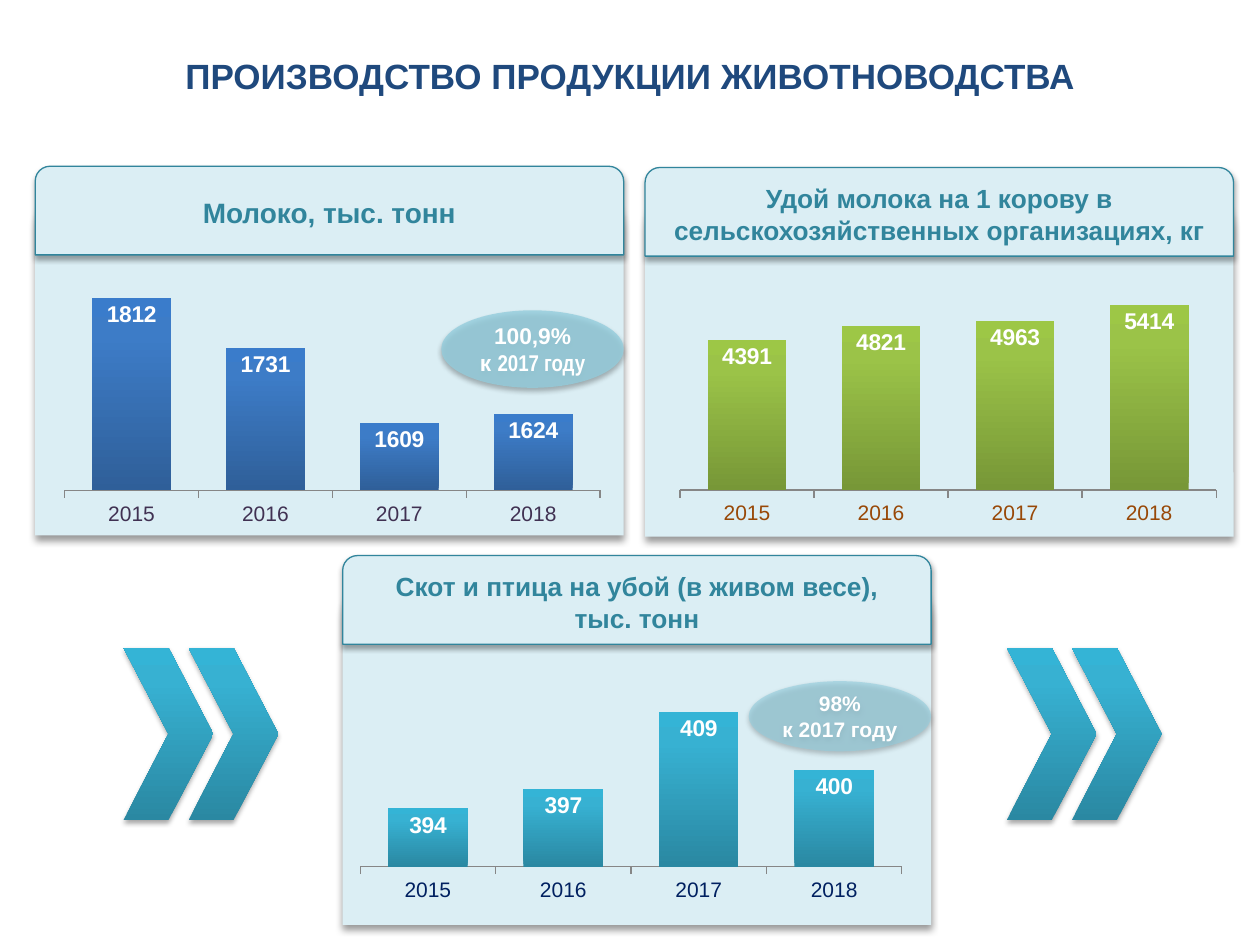
from copy import deepcopy
from dataclasses import dataclass

from lxml import etree
from pptx import Presentation
from pptx import util as u
from pptx.chart.data import CategoryChartData
from pptx.dml.color import RGBColor
from pptx.enum import chart as ch
from pptx.enum import shapes, text
from pptx.oxml import parse_xml
from pptx.oxml.ns import nsdecls, qn

WHITE = RGBColor(0xFF, 0xFF, 0xFF)
NAVY = RGBColor(0x1F, 0x49, 0x7D)
PALE = RGBColor(0xDB, 0xEE, 0xF4)
TEAL = RGBColor(0x31, 0x85, 0x9C)
SKY = RGBColor(0x93, 0xCD, 0xDD)
GREY = RGBColor(0x86, 0x86, 0x86)
PURPLE = RGBColor(0x40, 0x31, 0x52)
BROWN = RGBColor(0x98, 0x48, 0x07)
DARK_BLUE = RGBColor(0x00, 0x20, 0x60)
BLUES = [RGBColor(0x2F, 0x5F, 0x99), RGBColor(0x3D, 0x7C, 0xC7), RGBColor(0x3A, 0x7C, 0xCB)]
GREENS = [RGBColor(0x77, 0x97, 0x37), RGBColor(0x9B, 0xC3, 0x48), RGBColor(0x9D, 0xC7, 0x46)]
CYANS = [RGBColor(0x2A, 0x88, 0xA2), RGBColor(0x37, 0xB1, 0xD2), RGBColor(0x34, 0xB4, 0xD6)]

YEARS = ["2015", "2016", "2017", "2018"]
MSO = shapes.MSO_SHAPE


@dataclass
class Box:
    x: float
    y: float
    w: float
    h: float

    def share(self, x, y, w, h):
        """Box given as shares of this one."""
        return Box(self.x + x * self.w, self.y + y * self.h, w * self.w, h * self.h)

    def emu(self):
        return [u.Inches(v) for v in (self.x, self.y, self.w, self.h)]


def fill_gradient(fill, colors):
    """Bottom-to-top gradient with stops at 0, 80 and 100 %."""
    fill.gradient()
    fill.gradient_angle = 90
    gs = fill.gradient_stops[-1]._gs
    gs.addnext(deepcopy(gs))
    for stop, pos, color in zip(fill.gradient_stops, (0, 0.8, 1), colors):
        stop.position = pos
        stop.color.rgb = color


def add_shadow(sp, alpha=35, blur=3.1, dist=1.8):
    sp.shadow.inherit = False
    effects = sp._element.spPr.find(qn("a:effectLst"))
    effects.append(parse_xml(
        f'<a:outerShdw {nsdecls("a")} blurRad="{u.Pt(blur)}" dist="{u.Pt(dist)}" '
        f'dir="5400000" rotWithShape="0"><a:srgbClr val="000000">'
        f'<a:alpha val="{alpha * 1000}"/></a:srgbClr></a:outerShdw>'))


def add_plain(s, kind, box, color=None, line=None):
    sp = s.shapes.add_shape(kind, *box.emu())
    if color is not None:
        sp.fill.solid()
        sp.fill.fore_color.rgb = color
    if line is None:
        sp.line.fill.background()
    else:
        sp.line.color.rgb = line
        sp.line.width = u.Pt(0.75)
    return sp


def write(sp, words, size, color):
    tf = sp.text_frame
    tf.word_wrap = True
    tf.vertical_anchor = text.MSO_ANCHOR.MIDDLE
    tf.text = words
    for p in tf.paragraphs:
        p.alignment = text.PP_ALIGN.CENTER
        for r in p.runs:
            r.font.name, r.font.size, r.font.bold = "Arial", u.Pt(size), True
            r.font.color.rgb = color
    return tf


def add_columns(s, box, values, scale, colors, label_color, layout):
    """Column chart; layout is the inner plot area as shares of the chart."""
    data = CategoryChartData(number_format="0")
    data.categories = YEARS
    data.add_series("Series 1", values)
    chart = s.shapes.add_chart(ch.XL_CHART_TYPE.COLUMN_CLUSTERED, *box.emu(), data).chart
    chart.has_legend = chart.has_title = False
    chart.font.name, chart.font.size = "Arial", u.Pt(14)
    chart.font.color.rgb = label_color

    va, ca = chart.value_axis, chart.category_axis
    va.minimum_scale, va.maximum_scale = scale
    va.has_major_gridlines = va.visible = False
    ca.major_tick_mark = ch.XL_TICK_MARK.OUTSIDE
    ca.format.line.color.rgb = GREY
    ca.tick_labels.font.size = u.Pt(12)
    ca.tick_labels.font.name = "Arial"
    ca.tick_labels.font.color.rgb = label_color

    plot = chart.plots[0]
    plot.gap_width, plot.vary_by_categories = 70, False
    fill_gradient(plot.series[0].format.fill, colors)
    plot.has_data_labels = True
    dl = plot.data_labels
    dl.show_value, dl.position = True, ch.XL_LABEL_POSITION.INSIDE_END
    dl.font.name, dl.font.size, dl.font.bold = "Arial", u.Pt(13), True
    dl.font.color.rgb = WHITE

    c_chart = chart._chartSpace.find(qn("c:chart"))
    area = c_chart.find(qn("c:plotArea"))
    for old in area.findall(qn("c:layout")):
        area.remove(old)
    node = etree.Element(qn("c:layout"))
    manual = etree.SubElement(node, qn("c:manualLayout"))
    settings = [("layoutTarget", "inner"), ("xMode", "edge"), ("yMode", "edge"),
                *zip("xywh", layout)]
    for name, val in settings:
        etree.SubElement(manual, qn(f"c:{name}")).set("val", str(val))
    area.insert(0, node)
    clear = parse_xml(f'<c:spPr {nsdecls("c", "a")}><a:noFill/><a:ln><a:noFill/></a:ln></c:spPr>')
    area.append(deepcopy(clear))
    c_chart.addnext(clear)


def add_panel(s, box, title, size, chart_share, **chart):
    body = add_plain(s, MSO.ROUND_2_SAME_RECTANGLE, box, PALE)
    add_shadow(body, 40, 4, 3)
    head = add_plain(s, MSO.ROUND_2_SAME_RECTANGLE, box.share(0, 0, 1, 0.24), PALE, TEAL)
    add_shadow(head)
    write(head, title, size, TEAL)
    add_columns(s, box.share(*chart_share), **chart)


def add_badge(s, box, words, size, alpha):
    sp = add_plain(s, MSO.OVAL, box, SKY)
    clr = sp._element.spPr.find(qn("a:solidFill"))[0]
    etree.SubElement(clr, qn("a:alpha")).set("val", str(alpha * 1000))
    add_shadow(sp)
    tf = write(sp, words, size, WHITE)
    tf.margin_left = tf.margin_right = tf.margin_top = tf.margin_bottom = 0
    return tf


def add_chevrons(s, box):
    for x in (0, 0.42):
        sp = add_plain(s, MSO.CHEVRON, box.share(x, 0, 0.58, 1))
        fill_gradient(sp.fill, CYANS)
        add_shadow(sp)


def main():
    prs = Presentation()
    prs.slide_width, prs.slide_height = u.Inches(10), u.Inches(7.5)
    s = prs.slides.add_slide(prs.slide_layouts[6])

    title = s.shapes.add_textbox(*Box(0.17, 0.38, 9.66, 0.44).emu())
    write(title, "ПРОИЗВОДСТВО ПРОДУКЦИИ ЖИВОТНОВОДСТВА", 20, NAVY)

    milk, udder, meat = (Box(x, y, 4.67, 2.93)
                         for x, y in ((0.28, 1.32), (5.12, 1.33), (2.72, 4.41)))
    add_panel(s, milk, "Молоко, тыс. тонн", 16, (0, 0.25, 1, 0.73),
              values=(1812, 1731, 1609, 1624), scale=(1500, 1850), colors=BLUES,
              label_color=PURPLE, layout=(0.05, 0.06, 0.91, 0.8))
    add_panel(s, udder, "Удой молока на 1 корову в сельскохозяйственных организациях, кг",
              15, (0.02, 0.26, 0.98, 0.74),
              values=(4391, 4821, 4963, 5414), scale=(0, 6000), colors=GREENS,
              label_color=BROWN, layout=(0.04, 0.08, 0.93, 0.75))
    add_panel(s, meat, "Скот и птица на убой (в живом весе),\vтыс. тонн",
              15, (0, 0.25, 0.99, 0.75),
              values=(394, 397, 409, 400), scale=(385, 415), colors=CYANS,
              label_color=DARK_BLUE, layout=(0.03, 0.09, 0.93, 0.7))

    tf = add_badge(s, milk.share(0.69, 0.39, 0.31, 0.21), "100,9%\nк ", 13, 78)
    r = tf.paragraphs[1].add_run()
    r.text = "2017 году"
    r.font.name, r.font.size, r.font.bold = "Arial Narrow", u.Pt(13), True
    r.font.color.rgb = WHITE
    add_badge(s, meat.share(0.69, 0.34, 0.31, 0.19), "98%\nк 2017 году", 12, 61)

    for x in (0.98, 7.99):
        add_chevrons(s, Box(x, 5.14, 1.23, 1.37))

    prs.save("out.pptx")


if __name__ == "__main__":
    main()
